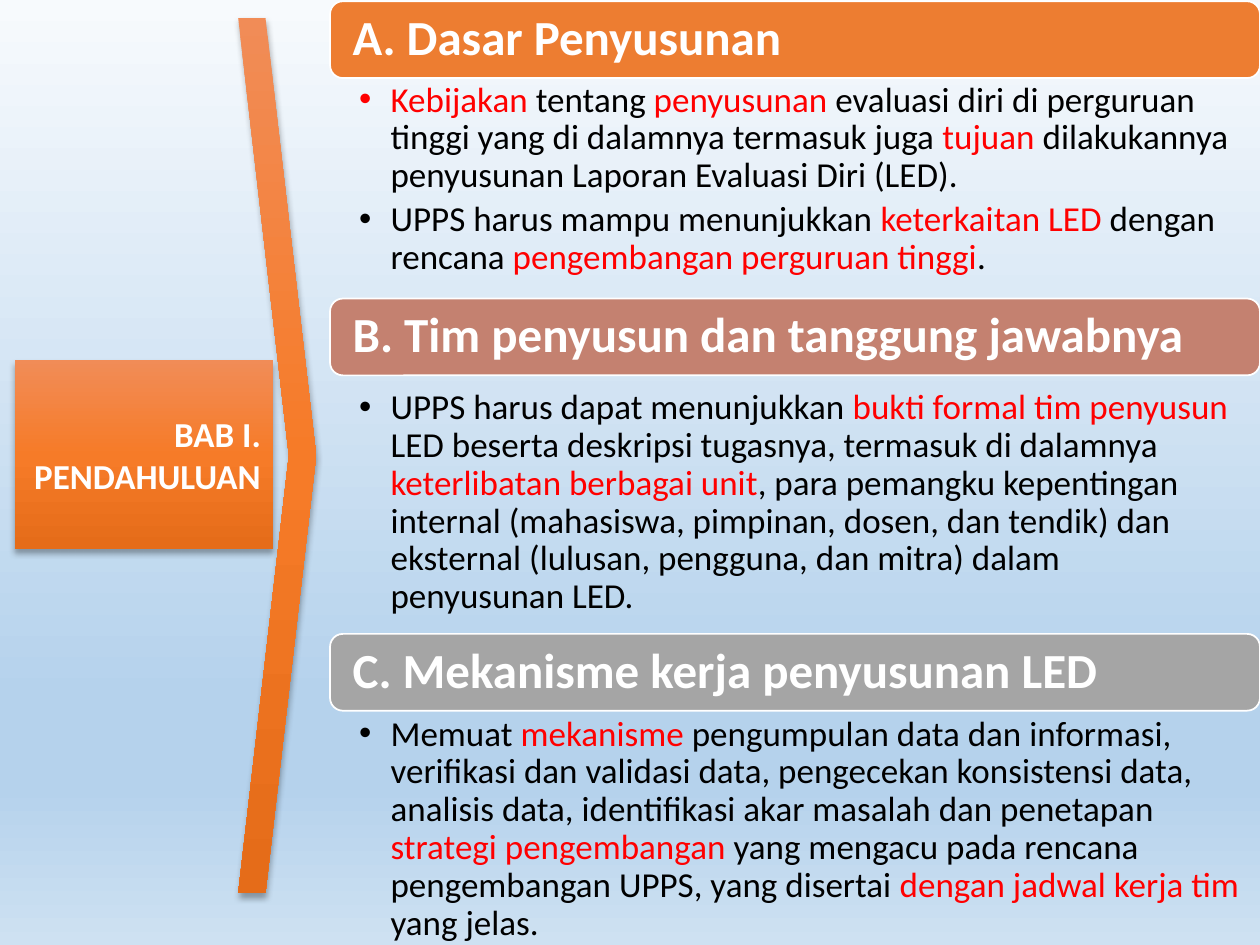
from typing import NamedTuple

from lxml.etree import SubElement
from pptx import Presentation
from pptx.dml.color import RGBColor
from pptx.dml.fill import FillFormat
from pptx.enum.shapes import MSO_SHAPE
from pptx.enum.text import MSO_ANCHOR, PP_ALIGN
from pptx.oxml.ns import qn
from pptx.oxml.xmlchemy import BaseOxmlElement
from pptx.shapes.autoshape import Shape
from pptx.slide import Slide
from pptx.text.text import TextFrame, _Paragraph
from pptx.util import Pt

FONT = "Calibri"
WHITE = RGBColor(0xFF, 0xFF, 0xFF)
BLACK = RGBColor(0x00, 0x00, 0x00)
RED = RGBColor(0xFF, 0x00, 0x00)
ORANGE = RGBColor(0xED, 0x7D, 0x31)
CLAY = RGBColor(0xC4, 0x81, 0x70)
GRAY = RGBColor(0xA5, 0xA5, 0xA5)

SLIDE_WIDTH, SLIDE_HEIGHT = 720, 540
SECTION_LEFT = 188.6
SECTION_WIDTH = SLIDE_WIDTH - SECTION_LEFT
HEADING_HEIGHT = 43.9


class Stop(NamedTuple):
    percent: int
    color: RGBColor


class Box(NamedTuple):
    left: float
    top: float
    width: float
    height: float


class Words(NamedTuple):
    text: str
    color: RGBColor = BLACK


class Section(NamedTuple):
    heading: str
    color: RGBColor
    heading_top: float
    body_top: float
    body_height: float
    bullets: list[list[Words]]


SKY_STOPS = [
    Stop(0, RGBColor(0xF7, 0xFA, 0xFD)),
    Stop(74, RGBColor(0xB5, 0xD2, 0xEC)),
    Stop(83, RGBColor(0xB5, 0xD2, 0xEC)),
    Stop(100, RGBColor(0xCE, 0xE1, 0xF2)),
]
ORANGE_STOPS = [
    Stop(0, RGBColor(0xF1, 0x8C, 0x57)),
    Stop(50, RGBColor(0xF6, 0x7B, 0x28)),
    Stop(100, RGBColor(0xE5, 0x6C, 0x19)),
]

SECTIONS = [
    Section("A. Dasar Penyusunan", ORANGE, 0.7, 44.6, 115.9, [
        [
            Words("Kebijakan ", RED),
            Words("tentang "),
            Words("penyusunan ", RED),
            Words("evaluasi diri di perguruan tinggi yang di dalamnya termasuk juga "),
            Words("tujuan ", RED),
            Words("dilakukannya penyusunan Laporan Evaluasi Diri (LED)."),
        ],
        [
            Words("UPPS harus mampu menunjukkan "),
            Words("keterkaitan LED ", RED),
            Words("dengan rencana "),
            Words("pengembangan perguruan tinggi", RED),
            Words("."),
        ],
    ]),
    Section("B. Tim penyusun dan tanggung jawabnya", CLAY, 170.6, 220.3, 157.7, [
        [
            Words("UPPS harus dapat menunjukkan "),
            Words("bukti formal tim penyusun", RED),
            Words(" LED beserta deskripsi tugasnya, termasuk di dalamnya "),
            Words("keterlibatan berbagai unit", RED),
            Words(", para pemangku kepentingan internal (mahasiswa, pimpinan, dosen, "
                  "dan tendik) dan eksternal (lulusan, pengguna, dan mitra) dalam "
                  "penyusunan LED."),
        ],
    ]),
    Section("C. Mekanisme kerja penyusunan LED", GRAY, 362.2, 406.8, 133.2, [
        [
            Words("Memuat "),
            Words("mekanisme ", RED),
            Words("pengumpulan data dan informasi, verifikasi dan validasi data, "
                  "pengecekan konsistensi data, analisis data, identifikasi akar "
                  "masalah dan penetapan "),
            Words("strategi pengembangan ", RED),
            Words("yang mengacu pada rencana pengembangan UPPS, yang disertai "),
            Words("dengan jadwal kerja tim ", RED),
            Words("yang jelas."),
        ],
    ]),
]


def set_vertical_gradient(fill: FillFormat, owner: BaseOxmlElement, stops: list[Stop]) -> None:
    """Fill from top to bottom; owner is the element that holds the fill."""
    fill.gradient()
    fill.gradient_angle = 270
    stop_list = next(owner.iter(qn("a:gsLst")))
    for old_stop in list(stop_list):
        stop_list.remove(old_stop)
    for stop in stops:
        element = SubElement(stop_list, qn("a:gs"), pos=str(stop.percent * 1000))
        SubElement(element, qn("a:srgbClr"), val=str(stop.color))


def add_soft_shadow(shape: Shape) -> None:
    shape.shadow.inherit = False
    effects = shape.element.spPr.find(qn("a:effectLst"))
    shadow = SubElement(effects, qn("a:outerShdw"), blurRad=str(Pt(3.5)), dist=str(Pt(2.2)),
                        dir="5400000", algn="ctr", rotWithShape="0")
    color = SubElement(shadow, qn("a:srgbClr"), val=str(BLACK))
    SubElement(color, qn("a:alpha"), val="32000")


def add_shape(slide: Slide, kind: MSO_SHAPE, box: Box) -> Shape:
    return slide.shapes.add_shape(kind, *(Pt(length) for length in box))


def add_orange_shape(slide: Slide, kind: MSO_SHAPE, box: Box) -> Shape:
    shape = add_shape(slide, kind, box)
    set_vertical_gradient(shape.fill, shape.element, ORANGE_STOPS)
    shape.line.fill.background()
    add_soft_shadow(shape)
    return shape


def add_run(paragraph: _Paragraph, words: Words, size: float, bold: bool = False) -> None:
    run = paragraph.add_run()
    run.text = words.text
    run.font.name = FONT
    run.font.size = Pt(size)
    run.font.bold = bold
    run.font.color.rgb = words.color


def set_margins(frame: TextFrame, left: float, top: float, right: float, bottom: float) -> None:
    frame.word_wrap = True
    frame.margin_left, frame.margin_top = Pt(left), Pt(top)
    frame.margin_right, frame.margin_bottom = Pt(right), Pt(bottom)


def add_heading(slide: Slide, section: Section) -> None:
    box = Box(SECTION_LEFT, section.heading_top, SECTION_WIDTH, HEADING_HEIGHT)
    shape = add_shape(slide, MSO_SHAPE.ROUNDED_RECTANGLE, box)
    shape.shadow.inherit = False
    shape.fill.solid()
    shape.fill.fore_color.rgb = section.color
    shape.line.color.rgb = WHITE
    shape.line.width = Pt(1)
    frame = shape.text_frame
    set_margins(frame, 10.8, 8.4, 10.8, 8.4)
    frame.vertical_anchor = MSO_ANCHOR.MIDDLE
    paragraph = frame.paragraphs[0]
    paragraph.alignment = PP_ALIGN.LEFT
    paragraph.line_spacing = 0.9
    add_run(paragraph, Words(section.heading, WHITE), 28, bold=True)


def add_bullets(slide: Slide, section: Section) -> None:
    box = Box(SECTION_LEFT, section.body_top, SECTION_WIDTH, section.body_height)
    frame = slide.shapes.add_textbox(*(Pt(length) for length in box)).text_frame
    set_margins(frame, 16.6, 2.2, 11.5, 2.2)
    for index, bullet in enumerate(section.bullets):
        paragraph = frame.add_paragraph() if index else frame.paragraphs[0]
        paragraph.level = 1
        paragraph.line_spacing = 0.9
        paragraph.space_after = Pt(3.5)
        properties = paragraph._p.get_or_add_pPr()
        properties.set("marL", str(Pt(18)))
        properties.set("indent", str(Pt(-18)))
        SubElement(properties, qn("a:buFont"), typeface="Arial")
        SubElement(properties, qn("a:buChar"), char="•")
        for words in bullet:
            add_run(paragraph, words, 20)


def main() -> None:
    presentation = Presentation()
    presentation.slide_width, presentation.slide_height = Pt(SLIDE_WIDTH), Pt(SLIDE_HEIGHT)
    slide = presentation.slides.add_slide(presentation.slide_layouts[6])
    set_vertical_gradient(slide.background.fill, slide.element, SKY_STOPS)

    chapter = add_orange_shape(slide, MSO_SHAPE.RECTANGLE, Box(8.6, 205.9, 147.6, 108))
    chapter.text_frame.word_wrap = True
    chapter.text_frame.vertical_anchor = MSO_ANCHOR.MIDDLE
    paragraph = chapter.text_frame.paragraphs[0]
    paragraph.alignment = PP_ALIGN.RIGHT
    add_run(paragraph, Words("BAB I. PENDAHULUAN", WHITE), 20, bold=True)

    chevron = add_orange_shape(slide, MSO_SHAPE.CHEVRON, Box(136.1, 10.1, 44.6, 500.4))
    chevron.adjustments[0] = 0.65

    for section in SECTIONS:
        add_heading(slide, section)
        add_bullets(slide, section)
    presentation.save("out.pptx")


if __name__ == "__main__":
    main()
